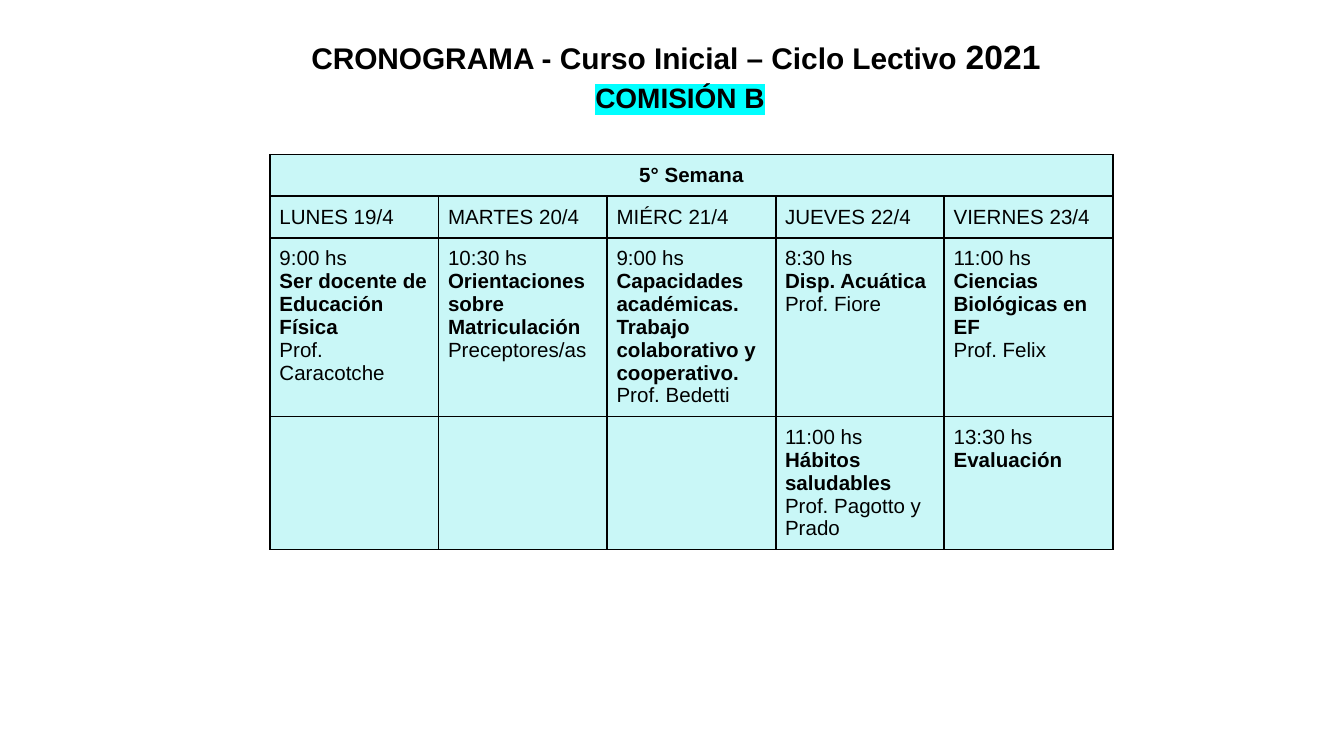
from dataclasses import dataclass

from lxml import etree
from pptx import Presentation
from pptx.dml.color import RGBColor
from pptx.enum import text
from pptx.oxml import ns
from pptx.util import Inches, Pt


@dataclass(frozen=True)
class Theme:
    font: str = "Arial"
    ink: str = "000000"
    cell: str = "C9F7F7"
    highlight: str = "00FFFF"
    heading: int = 16
    year: int = 18
    group: int = 15
    body: int = 11
    border: int = 1
    line_spacing: float = 1.15


@dataclass(frozen=True)
class Session:
    time: str
    subject: str
    staff: str = ""


THEME = Theme()
WEEK = "5° Semana"
DAYS = ["LUNES 19/4", "MARTES 20/4", "MIÉRC 21/4", "JUEVES 22/4", "VIERNES 23/4"]
SESSIONS = [
    [
        Session("9:00 hs", "Ser docente de Educación Física", "Prof. Caracotche"),
        Session("10:30 hs", "Orientaciones sobre Matriculación", "Preceptores/as"),
        Session("9:00 hs", "Capacidades académicas. Trabajo colaborativo y cooperativo.",
                "Prof. Bedetti"),
        Session("8:30 hs", "Disp. Acuática", "Prof. Fiore"),
        Session("11:00 hs", "Ciencias Biológicas en EF", "Prof. Felix"),
    ],
    [
        None,
        None,
        None,
        Session("11:00 hs", "Hábitos saludables", "Prof. Pagotto y Prado"),
        Session("13:30 hs", "Evaluación"),
    ],
]
ROW_HEIGHTS = [0.31, 0.31, 1.33, 0.99]
TABLE_WIDTH = 6.27


def style_paragraph(paragraph, size: int, bold: bool = False) -> None:
    font = paragraph.font
    font.name = THEME.font
    font.size = Pt(size)
    font.bold = bold
    font.color.rgb = RGBColor.from_string(THEME.ink)


def add_color(parent, tag: str, color: str) -> None:
    holder = etree.SubElement(parent, ns.qn(tag))
    etree.SubElement(holder, ns.qn("a:srgbClr"), val=color)


def style_cell(cell) -> None:
    cell.fill.solid()
    cell.fill.fore_color.rgb = RGBColor.from_string(THEME.cell)
    cell.margin_left = cell.margin_right = Inches(0.07)
    cell.margin_top = cell.margin_bottom = Inches(0.07)
    style_paragraph(cell.text_frame.paragraphs[0], THEME.body)
    properties = cell._tc.get_or_add_tcPr()
    for index, side in enumerate(("a:lnL", "a:lnR", "a:lnT", "a:lnB")):
        line = etree.Element(ns.qn(side), w=str(Pt(THEME.border)))
        add_color(line, "a:solidFill", THEME.ink)
        properties.insert(index, line)


def write_session(cell, session: Session) -> None:
    frame = cell.text_frame
    if session.staff:
        frame.text = "\n".join((session.time, session.subject, session.staff))
        for index, paragraph in enumerate(frame.paragraphs):
            style_paragraph(paragraph, THEME.body, bold=index == 1)
    else:
        paragraph = frame.paragraphs[0]
        paragraph.add_run().text = f"{session.time} "
        subject = paragraph.add_run()
        subject.text = session.subject
        subject.font.bold = True


def add_title(slide) -> None:
    title = slide.shapes.title
    title.left, title.top = Inches(1.85), Inches(0.12)
    title.width, title.height = Inches(6.42), Inches(0.84)
    frame = title.text_frame
    frame.word_wrap = True
    frame.auto_size = text.MSO_AUTO_SIZE.NONE
    frame.vertical_anchor = text.MSO_ANCHOR.TOP
    frame.margin_left = frame.margin_right = Inches(0.1)
    frame.margin_top = frame.margin_bottom = Inches(0.1)

    heading = frame.paragraphs[0]
    style_paragraph(heading, THEME.heading, bold=True)
    heading.add_run().text = "CRONOGRAMA - Curso Inicial – Ciclo Lectivo "
    year = heading.add_run()
    year.text = "2021"
    year.font.size = Pt(THEME.year)
    trailing = heading.add_run()
    trailing.text = " "
    trailing.font.bold = False

    group = frame.add_paragraph()
    style_paragraph(group, THEME.group, bold=True)
    group_run = group.add_run()
    group_run.text = "COMISIÓN B"
    add_color(group_run._r.get_or_add_rPr(), "a:highlight", THEME.highlight)

    for paragraph in frame.paragraphs:
        paragraph.alignment = text.PP_ALIGN.CENTER
        paragraph.line_spacing = THEME.line_spacing


def add_schedule(slide) -> None:
    frame = slide.shapes.add_table(
        len(ROW_HEIGHTS), len(DAYS), Inches(2.01), Inches(1.15),
        Inches(TABLE_WIDTH), Inches(sum(ROW_HEIGHTS)))
    table = frame.table
    table.first_row = table.horz_banding = False
    for row, height in zip(table.rows, ROW_HEIGHTS):
        row.height = Inches(height)
    for cell in table.iter_cells():
        style_cell(cell)

    week = table.cell(0, 0)
    week.merge(table.cell(0, len(DAYS) - 1))
    week.text = WEEK
    paragraph = week.text_frame.paragraphs[0]
    style_paragraph(paragraph, THEME.body, bold=True)
    paragraph.alignment = text.PP_ALIGN.CENTER

    for column, day in enumerate(DAYS):
        cell = table.cell(1, column)
        cell.text = day
        style_paragraph(cell.text_frame.paragraphs[0], THEME.body)
    for row, sessions in enumerate(SESSIONS, start=2):
        for column, session in enumerate(sessions):
            if session:
                write_session(table.cell(row, column), session)


def main() -> None:
    presentation = Presentation()
    presentation.slide_width = Inches(10)
    presentation.slide_height = presentation.slide_width * 9 // 16
    slide = presentation.slides.add_slide(presentation.slide_layouts[5])
    add_schedule(slide)
    add_title(slide)
    presentation.save("out.pptx")


if __name__ == "__main__":
    main()
